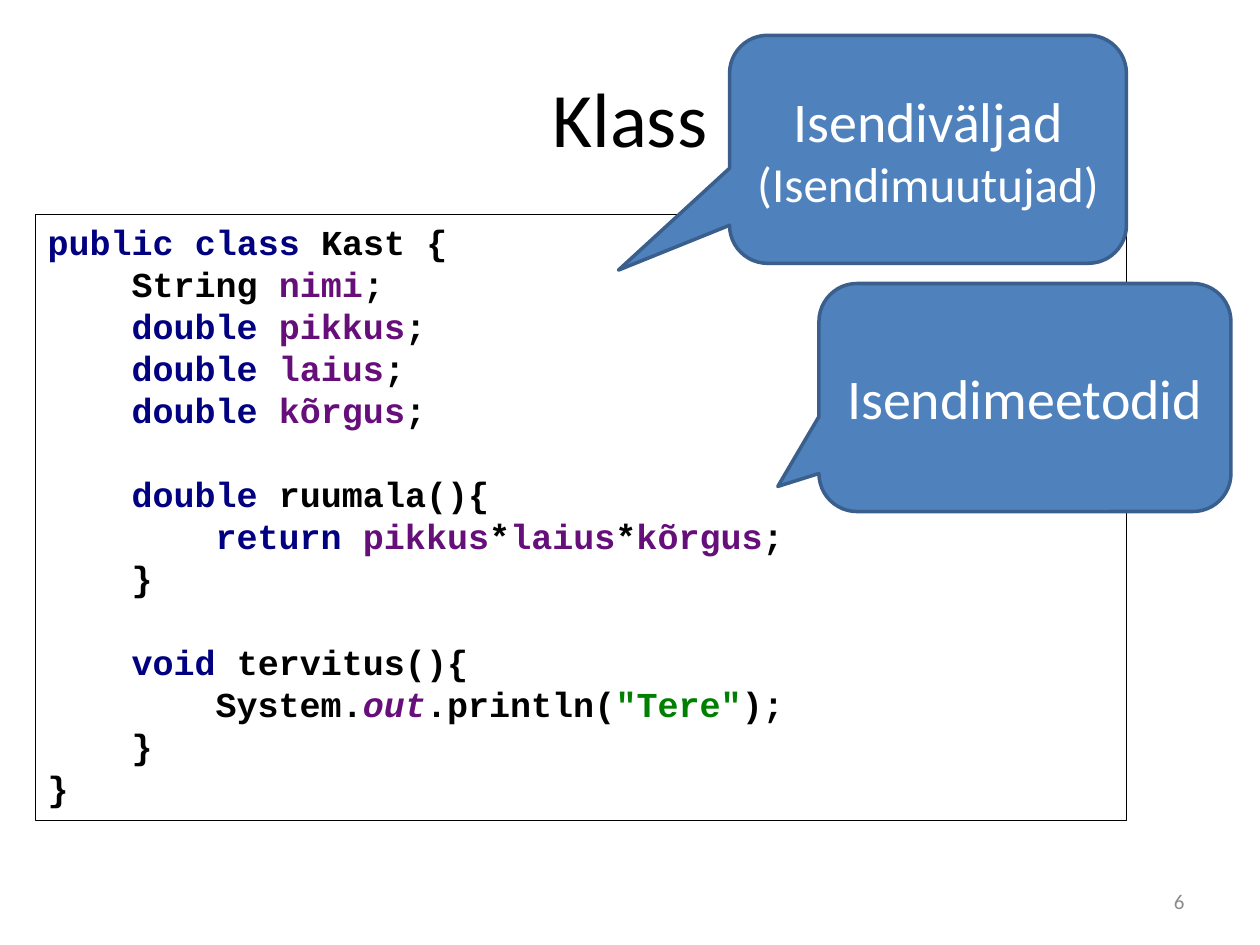
from pptx import Presentation
from pptx.dml.color import RGBColor
from pptx.enum.shapes import MSO_SHAPE
from pptx.enum.text import MSO_ANCHOR, PP_ALIGN
from pptx.util import Inches, Pt

COLORS = {
    "plain": "000000",
    "keyword": "000080",
    "field": "660E7A",
    "static": "660E7A",
    "string": "008000",
    "callout": "4F81BD",
    "outline": "3A5F8C",
    "white": "FFFFFF",
    "number": "8C8C8C",
}

CODE_LINES = [
    (0, 0, [("keyword", "public class "), ("plain", "Kast {")]),
    (1, 0, [("plain", "String "), ("field", "nimi"), ("plain", ";")]),
    *[(1, 0, [("keyword", "double "), ("field", name), ("plain", ";")])
      for name in ("pikkus", "laius", "kõrgus")],
    (1, 1, [("keyword", "double "), ("plain", "ruumala(){")]),
    (2, 0, [("keyword", "return "), ("field", "pikkus"), ("plain", "*"),
            ("field", "laius"), ("plain", "*"), ("field", "kõrgus"), ("plain", ";")]),
    (1, 0, [("plain", "}")]),
    (1, 1, [("keyword", "void "), ("plain", "tervitus(){")]),
    (2, 0, [("plain", "System."), ("static", "out"), ("plain", ".println("),
            ("string", '"Tere"'), ("plain", ");")]),
    (1, 0, [("plain", "}")]),
    (0, 0, [("plain", "}")]),
]


class SlideBuilder:
    text_font = "Calibri"
    code_font = "Courier New"
    code_size = 20
    code_pitch = 24
    indent = Pt(48)

    def __init__(self, presentation):
        self.slide = presentation.slides.add_slide(presentation.slide_layouts[5])

    def color(self, name):
        return RGBColor.from_string(COLORS[name])

    def set_text(self, shape, lines, color, align):
        frame = shape.text_frame
        frame.word_wrap = True
        frame.vertical_anchor = MSO_ANCHOR.MIDDLE
        frame.text = "\n".join(text for text, size in lines)
        for paragraph, (text, size) in zip(frame.paragraphs, lines):
            paragraph.alignment = align
            paragraph.font.name = self.text_font
            paragraph.font.size = Pt(size)
            paragraph.font.color.rgb = self.color(color)

    def title(self, text, *box):
        title = self.slide.shapes.title
        title.left, title.top, title.width, title.height = map(Inches, box)
        self.set_text(title, [(text, 44)], "plain", PP_ALIGN.CENTER)

    def page_number(self, text, *box):
        shape = self.slide.shapes.add_textbox(*map(Inches, box))
        self.set_text(shape, [(text, 12)], "number", PP_ALIGN.RIGHT)

    def outlined(self, kind, box, color, width):
        shape = self.slide.shapes.add_shape(kind, *map(Inches, box))
        shape.shadow.inherit = False
        shape.line.color.rgb = self.color(color)
        shape.line.width = Pt(width)
        return shape

    def code(self, lines, *box):
        shape = self.outlined(MSO_SHAPE.RECTANGLE, box, "plain", 0.75)
        shape.fill.background()
        frame = shape.text_frame
        frame.word_wrap = True
        frame.vertical_anchor = MSO_ANCHOR.TOP
        for index, (level, blank_lines, tokens) in enumerate(lines):
            paragraph = frame.add_paragraph() if index else frame.paragraphs[0]
            paragraph.alignment = PP_ALIGN.LEFT
            paragraph.line_spacing = Pt(self.code_pitch)
            paragraph.space_before = Pt(self.code_pitch * blank_lines)
            paragraph._p.get_or_add_pPr().set("marL", str(self.indent * level))
            paragraph.font.name = self.code_font
            paragraph.font.size = Pt(self.code_size)
            paragraph.font.bold = True
            for style, text in tokens:
                run = paragraph.add_run()
                run.text = text
                run.font.color.rgb = self.color(style)
                if style == "static":
                    run.font.italic = True

    def callout(self, lines, pointer, *box):
        shape = self.outlined(MSO_SHAPE.ROUNDED_RECTANGULAR_CALLOUT, box, "outline", 2)
        shape.fill.solid()
        shape.fill.fore_color.rgb = self.color("callout")
        shape.adjustments[0], shape.adjustments[1] = pointer
        self.set_text(shape, lines, "white", PP_ALIGN.CENTER)


def main():
    presentation = Presentation()
    presentation.slide_width = Inches(10)
    presentation.slide_height = Inches(7.5)
    builder = SlideBuilder(presentation)
    builder.title("Klass", 0.5, 0.3, 9, 1.25)
    builder.page_number("6", 7.17, 6.95, 2.33, 0.4)
    builder.code(CODE_LINES, 0.28, 1.7, 8.66, 4.81)
    builder.callout([("Isendimeetodid", 32)], (-0.6, 0.39), 6.5, 2.25, 3.27, 1.81)
    builder.callout([("Isendiväljad", 32), ("(Isendimuutujad)", 28)],
                    (-0.78, 0.53), 5.79, 0.28, 3.15, 1.81)
    presentation.save("out.pptx")


if __name__ == "__main__":
    main()
